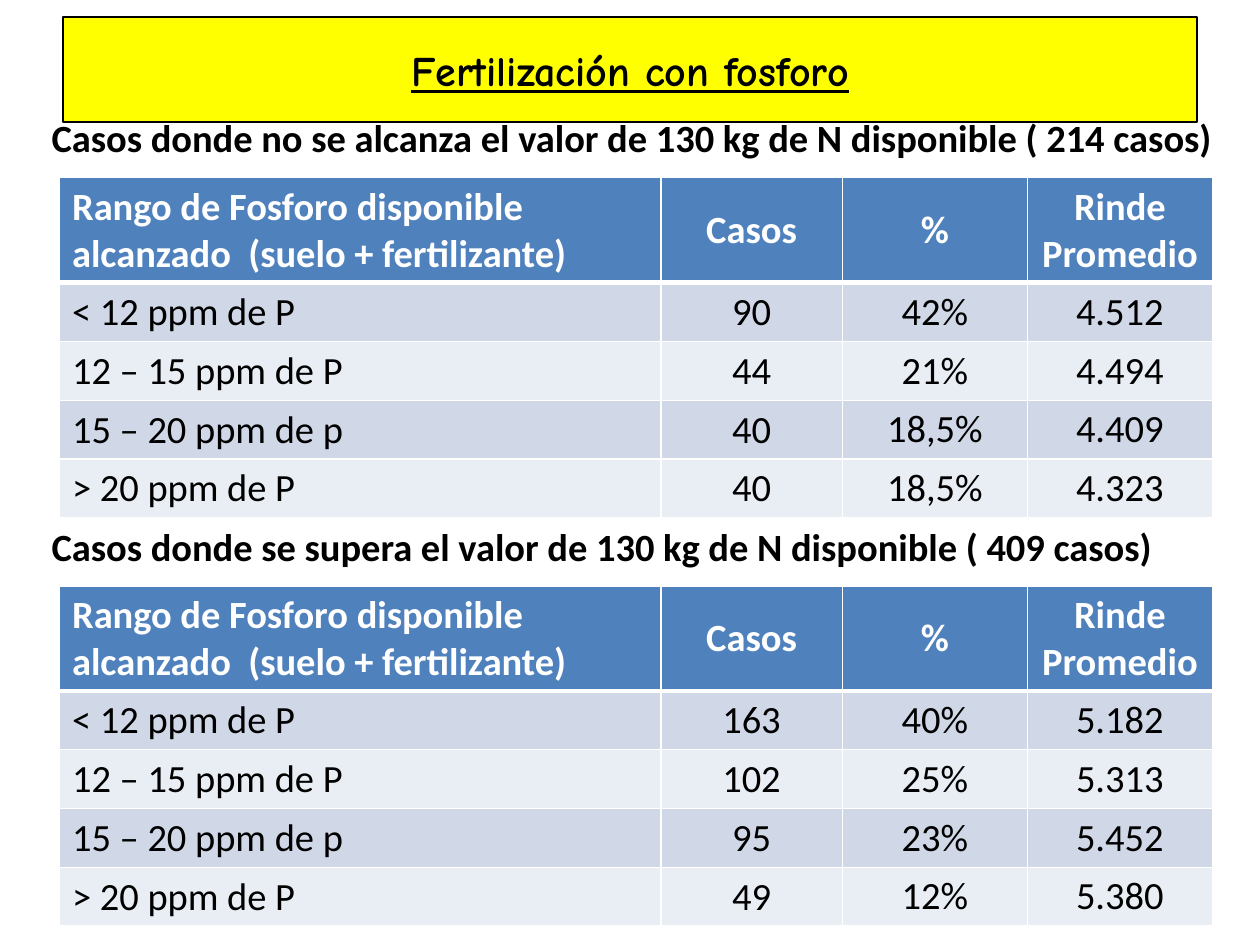
from dataclasses import dataclass

import pptx
import pptx.dml.color
import pptx.enum.shapes
import pptx.enum.text
import pptx.oxml
import pptx.oxml.ns
import pptx.util
from pptx.util import Cm

ALIGN = pptx.enum.text.PP_ALIGN
ANCHOR = pptx.enum.text.MSO_ANCHOR
GROW = pptx.enum.text.MSO_AUTO_SIZE.SHAPE_TO_FIT_TEXT

HEAD = ("Rango de Fosforo disponible alcanzado  (suelo + fertilizante)",
        "Casos", "%", "Rinde Promedio")
RANGES = ("< 12 ppm de P", "12 – 15 ppm de P", "15 – 20 ppm de p", "> 20 ppm de P")
WIDTHS = (12.12, 3.66, 3.73, 3.73)
HEAD_HIGH, ROW_HIGH = 2.11, 1.18
BLACK, WHITE, BLUE, YELLOW = "000000", "FFFFFF", "4F81BD", "FFFF00"
BANDS = ("D0D8E8", "E9EDF4")


@dataclass
class Group:
    top: float
    title: str
    cases: tuple[str, ...]
    shares: tuple[str, ...]
    yields: tuple[str, ...]


GROUPS = (
    Group(2.18, "Casos donde no se alcanza el valor de 130 kg de N disponible ( 214 casos)",
          ("90", "44", "40", "40"), ("42%", "21%", "18,5%", "18,5%"),
          ("4.512", "4.494", "4.409", "4.323")),
    Group(10.41, "Casos donde se supera el valor de 130 kg de N disponible ( 409 casos)",
          ("163", "102", "95", "49"), ("40%", "25%", "23%", "12%"),
          ("5.182", "5.313", "5.452", "5.380")),
)


def color(code: str) -> pptx.dml.color.RGBColor:
    return pptx.dml.color.RGBColor.from_string(code)


def write(frame, text: str, ink: str, size: float = 22, bold: bool = True,
          face: str = "Calibri", align=ALIGN.LEFT) -> None:
    frame.text = text
    line = frame.paragraphs[0]
    line.alignment = align
    font = line.runs[0].font
    font.name, font.size, font.bold = face, pptx.util.Pt(size), bold
    font.color.rgb = color(ink)


def edge(cell, side: str, width: float) -> None:
    cell._tc.get_or_add_tcPr().append(pptx.oxml.parse_xml(
        f'<a:ln{side} {pptx.oxml.ns.nsdecls("a")} w="{pptx.util.Pt(width)}">'
        f'<a:solidFill><a:srgbClr val="{WHITE}"/></a:solidFill></a:ln{side}>'))


def style(cell, text: str, row: int, col: int) -> None:
    head = row == 0
    write(cell.text_frame, text, WHITE if head else BLACK, bold=head,
          align=ALIGN.CENTER if col else ALIGN.LEFT)
    if col:
        cell.vertical_anchor = ANCHOR.MIDDLE
    if col > 1 and not head:
        cell.margin_left = cell.margin_right = cell.margin_top = cell.margin_bottom = 0
    for side in "LRTB":
        thick = (side == "B" and head) or (side == "T" and row == 1)
        edge(cell, side, 3 if thick else 1)
    cell.fill.solid()
    cell.fill.fore_color.rgb = color(BLUE if head else BANDS[(row - 1) % 2])


def draw_group(slide, group: Group) -> None:
    label = slide.shapes.add_textbox(Cm(0.79), Cm(group.top), Cm(24.61), Cm(1.2))
    label.text_frame.word_wrap = True
    label.text_frame.auto_size = GROW
    write(label.text_frame, group.title, BLACK)

    rows = [HEAD, *zip(RANGES, group.cases, group.shares, group.yields)]
    highs = [HEAD_HIGH] + [ROW_HIGH] * len(RANGES)
    table = slide.shapes.add_table(len(rows), len(HEAD), Cm(1.2), Cm(group.top + 1.4),
                                   Cm(sum(WIDTHS)), Cm(sum(highs))).table
    for column, width in zip(table.columns, WIDTHS):
        column.width = Cm(width)
    for row, (texts, high) in enumerate(zip(rows, highs)):
        table.rows[row].height = Cm(high)
        for col, text in enumerate(texts):
            style(table.cell(row, col), text, row, col)


def draw_title(slide) -> None:
    title = slide.shapes.title
    title.left, title.top, title.width, title.height = Cm(1.27), Cm(0.76), Cm(22.86), Cm(1.28)
    title.fill.solid()
    title.fill.fore_color.rgb = color(YELLOW)
    title.line.color.rgb = color(BLACK)
    title.line.width = pptx.util.Pt(0.75)
    frame = title.text_frame
    frame.word_wrap = True
    frame.auto_size = GROW
    frame.vertical_anchor = ANCHOR.MIDDLE
    write(frame, "Fertilización con fosforo", BLACK, 24, face="Comic Neue", align=ALIGN.CENTER)
    frame.paragraphs[0].runs[0].font.underline = True


def main() -> None:
    deck = pptx.Presentation()
    deck.slide_width, deck.slide_height = Cm(25.4), Cm(19.05)
    slide = deck.slides.add_slide(deck.slide_layouts[5])
    draw_title(slide)
    for group in GROUPS:
        draw_group(slide, group)
    deck.save("out.pptx")


if __name__ == "__main__":
    main()
